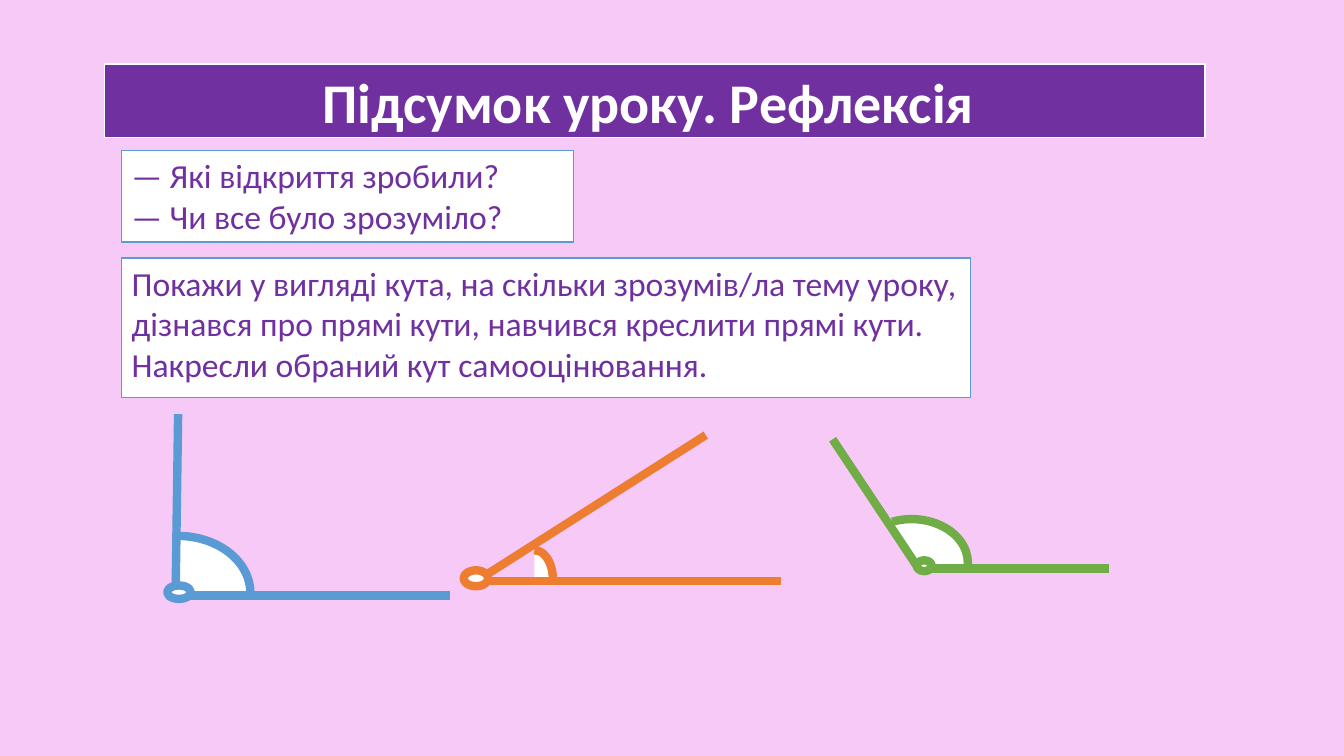
from lxml import etree
from pptx import Presentation
from pptx import util as u
from pptx.dml.color import RGBColor
from pptx.enum import shapes, text
from pptx.oxml.ns import qn

PINK = RGBColor(0xF7, 0xC9, 0xF7)
PURPLE = RGBColor(0x70, 0x30, 0xA0)
WHITE = RGBColor(0xFF, 0xFF, 0xFF)
BLUE = RGBColor(0x5B, 0x9B, 0xD5)
ORANGE = RGBColor(0xED, 0x7D, 0x31)
GREEN = RGBColor(0x70, 0xAD, 0x47)


class Board:
    """Slide on a grid of 160 columns by 90 rows."""
    font = "Calibri"
    stroke = 6
    cell = u.Inches(1 / 12)

    def __init__(self, prs):
        self.s = prs.slides.add_slide(prs.slide_layouts[5])
        fill = self.s.background.fill
        fill.solid()
        fill.fore_color.rgb = PINK

    def grid(self, *values):
        return [round(v * self.cell) for v in values]

    def paint(self, sp, fill, line, width):
        sp.fill.solid()
        sp.fill.fore_color.rgb = fill
        sp.line.color.rgb = line
        sp.line.width = u.Pt(width)

    def add_lines(self, tf, lines, size, color, bold=False, align=None):
        tf.word_wrap = True
        for i, line in enumerate(lines):
            p = tf.add_paragraph() if i else tf.paragraphs[0]
            p.alignment = align
            r = p.add_run()
            r.text = line
            r.font.name, r.font.size = self.font, u.Pt(size)
            r.font.bold, r.font.color.rgb = bold, color

    def title(self, box, line):
        sp = self.s.shapes.title
        sp.left, sp.top, sp.width, sp.height = self.grid(*box)
        self.paint(sp, PURPLE, WHITE, 1)
        tf = sp.text_frame
        tf.auto_size = text.MSO_AUTO_SIZE.NONE
        tf.vertical_anchor = text.MSO_ANCHOR.MIDDLE
        self.add_lines(tf, [line], 40, WHITE, True, text.PP_ALIGN.CENTER)

    def note(self, box, lines):
        sp = self.s.shapes.add_textbox(*self.grid(*box))
        self.paint(sp, WHITE, BLUE, 1)
        self.add_lines(sp.text_frame, lines, 24, PURPLE)

    def oval(self, group, kind, box, color):
        sp = group.shapes.add_shape(kind, *self.grid(*box))
        sp.shadow.inherit = False
        self.paint(sp, WHITE, color, self.stroke)
        return sp

    def ray(self, group, ends, color):
        line = group.shapes.add_connector(
            shapes.MSO_CONNECTOR.STRAIGHT, *self.grid(*ends))
        line.line.color.rgb = color
        line.line.width = u.Pt(self.stroke)
        etree.SubElement(line._element.spPr, qn("a:effectLst"))

    def angle(self, color, arc, sweep, rays, ring):
        group = self.s.shapes.add_group_shape()
        # Arc given by centre and radii, sweep in degrees
        cx, cy, rx, ry = arc
        sp = self.oval(group, shapes.MSO_SHAPE.ARC,
                       (cx - rx, cy - ry, 2 * rx, 2 * ry), color)
        for i, degrees in enumerate(sweep):
            sp.adjustments[i] = degrees * 0.6
        for ends in rays:
            self.ray(group, ends, color)
        self.oval(group, shapes.MSO_SHAPE.OVAL, ring, color)


def main():
    prs = Presentation()
    prs.slide_width, prs.slide_height = u.Inches(13.33), u.Inches(7.5)
    board = Board(prs)

    # Title and questions
    board.title((12.4, 7.6, 131, 8.8), "Підсумок уроку. Рефлексія ")
    board.note((14.5, 17.9, 53.8, 10.9),
               ["— Які відкриття зробили?", "— Чи все було зрозуміло?"])
    board.note((14.5, 30.7, 101, 16.6),
               ["Покажи у вигляді кута, на скільки зрозумів/ла тему уроку, "
                "дізнався про прямі кути, навчився креслити прямі кути.",
                "Накресли обраний кут самооцінювання."])

    # Right, acute and obtuse angles
    board.angle(BLUE, (21.2, 70.6, 8.6, 6.8), (270, 0),
                [(20.9, 71, 21.2, 49.3), (53.6, 70.9, 19.9, 70.9)],
                (19.9, 69.7, 2.8, 1.6))
    board.angle(ORANGE, (63.6, 68.9, 2.2, 3.4), (270, 0),
                [(93, 69.2, 57.1, 69.2), (56.2, 69.5, 84, 51.8)],
                (55.2, 67.9, 2.9, 1.9))
    board.angle(GREEN, (108.5, 67, 6.7, 5.2), (244.6, 4),
                [(109.4, 67.8, 99.1, 52.3), (109.4, 67.7, 132, 67.7)],
                (109.1, 66.7, 1.8, 1.3))

    prs.save("out.pptx")


if __name__ == "__main__":
    main()
